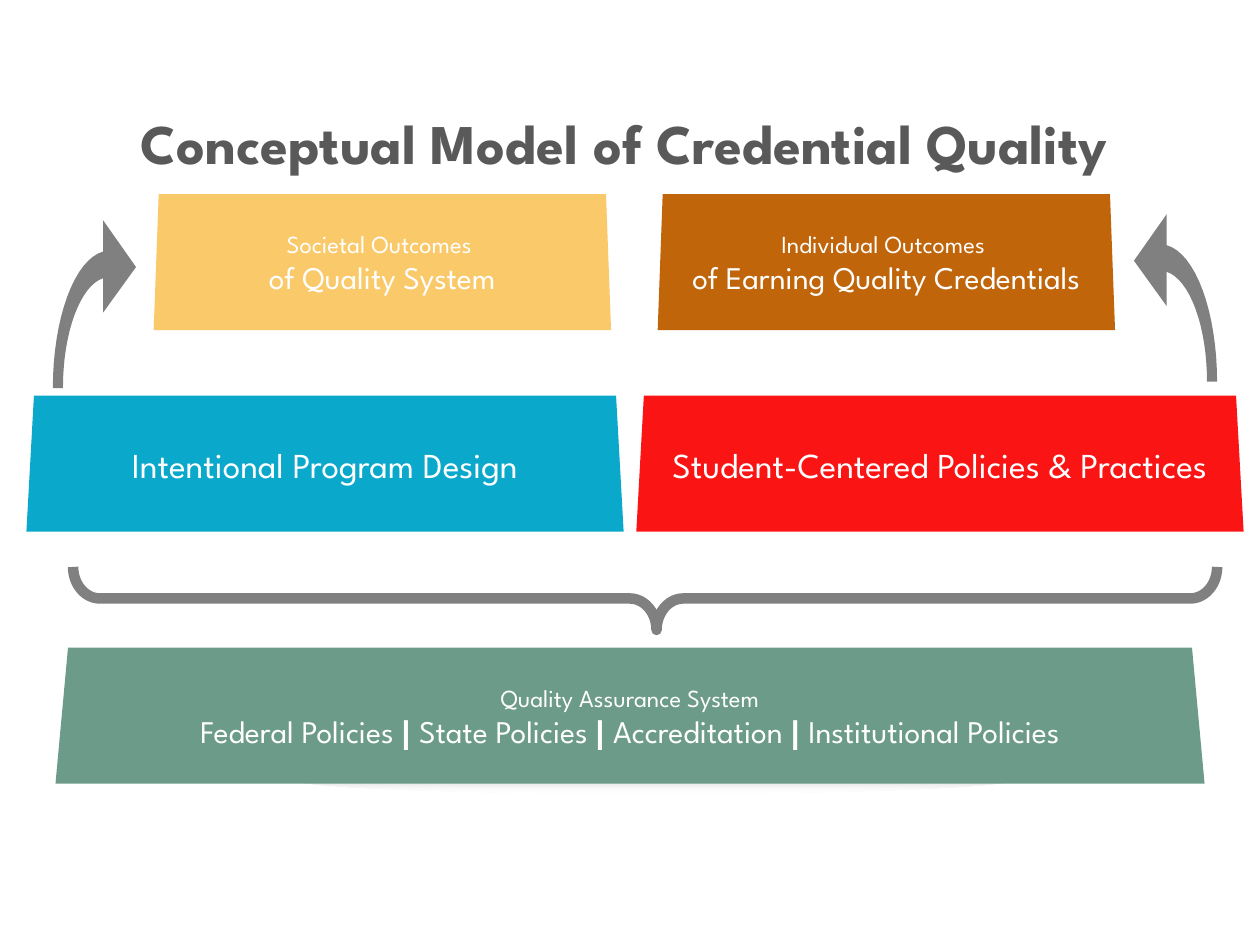
"""Build the Conceptual Model of Credential Quality slide."""
from math import acos, cos, sin

from lxml import etree
from pptx import Presentation
from pptx import util as u
from pptx.dml.color import RGBColor
from pptx.enum import shapes, text
from pptx.oxml import ns

COLORS = {
    "title": "595959", "white": "FFFFFF", "gray": "808080",
    "societal": "FAC969", "individual": "C0650A", "design": "0AA8CB",
    "policies": "FA1414", "assurance": "6C9B89",
}
FONT = "League Spartan"


def add_run(paragraph, words, size=18, color="white", font=FONT, bold=False):
    run = paragraph.add_run()
    run.text = words
    run.font.name = font
    run.font.size = u.Pt(size)
    run.font.bold = bold
    run.font.color.rgb = RGBColor.from_string(COLORS[color])


presentation = Presentation()
presentation.slide_width = u.Inches(10)
presentation.slide_height = u.Inches(7.5)
slide = presentation.slides.add_slide(presentation.slide_layouts[5])

title = slide.shapes.title
title.left, title.top = u.Inches(0.42), u.Inches(0.81)
title.width, title.height = u.Inches(9.08), u.Inches(0.64)
title.text_frame.vertical_anchor = text.MSO_ANCHOR.TOP
title.text_frame.paragraphs[0].alignment = text.PP_ALIGN.CENTER
add_run(title.text_frame.paragraphs[0], "Conceptual Model of Credential Quality",
        size=32, color="title", bold=True)

glow = slide.shapes.add_shape(shapes.MSO_SHAPE.OVAL, u.Inches(2.27), u.Inches(6.05),
                              u.Inches(5.83), u.Inches(0.25))
glow.shadow.inherit = False
glow.line.fill.background()
glow.fill.gradient()
gradient = glow.fill._xPr.find(ns.qn("a:gradFill"))
for child in list(gradient):
    gradient.remove(child)
stops = etree.SubElement(gradient, ns.qn("a:gsLst"))
for position, color, alpha in [(0, "gray", 38), (100, "white", 0)]:
    stop = etree.SubElement(stops, ns.qn("a:gs"), pos=str(position * 1000))
    tint = etree.SubElement(stop, ns.qn("a:srgbClr"), val=COLORS[color])
    etree.SubElement(tint, ns.qn("a:alpha"), val=str(alpha * 1000))
gradient_path = etree.SubElement(gradient, ns.qn("a:path"), path="shape")
etree.SubElement(gradient_path, ns.qn("a:fillToRect"),
                 l="50000", t="50000", r="50000", b="50000")

BLOCK_HEIGHT = 1.08
blocks = [
    ("societal", 1.22, 1.54, 3.63, 0.04, [("Societal Outcomes ", 14), ("of Quality System", 18)]),
    ("individual", 5.22, 1.54, 3.63, 0.04,
     [("Individual Outcomes ", 14), ("of Earning Quality Credentials", 18)]),
    ("design", 0.21, 3.14, 4.74, 0.06, [("Intentional Program Design", 20)]),
    ("policies", 5.05, 3.14, 4.82, 0.06, [("Student-Centered Policies & Practices", 20)]),
    ("assurance", 0.44, 5.14, 9.12, 0.1,
     [("Quality Assurance System", 14),
      ("Federal Policies | State Policies | Accreditation | Institutional Policies", 18)]),
]
for color, left, top, width, slant, lines in blocks:
    block = slide.shapes.add_shape(shapes.MSO_SHAPE.TRAPEZOID, u.Inches(left), u.Inches(top),
                                   u.Inches(width), u.Inches(BLOCK_HEIGHT))
    block.adjustments[0] = slant / BLOCK_HEIGHT
    block.shadow.inherit = False
    block.fill.solid()
    block.fill.fore_color.rgb = RGBColor.from_string(COLORS[color])
    block.line.fill.background()
    frame = block.text_frame
    frame.word_wrap = True
    frame.vertical_anchor = text.MSO_ANCHOR.MIDDLE
    for index, (words, size) in enumerate(lines):
        paragraph = frame.add_paragraph() if index else frame.paragraphs[0]
        paragraph.alignment = text.PP_ALIGN.CENTER
        first, *others = words.split("| ")
        add_run(paragraph, first, size=size)
        for part in others:
            add_run(paragraph, "| ", size=size, font="Arial", bold=True)
            add_run(paragraph, part, size=size)

brace = slide.shapes.add_shape(shapes.MSO_SHAPE.RIGHT_BRACE, u.Inches(4.87), u.Inches(0.21),
                               u.Inches(0.5), u.Inches(9.08))
brace.rotation = 90
brace.adjustments[0] = 0.425
brace.adjustments[1] = 0.49
brace.shadow.inherit = False
brace.fill.background()
brace.line.color.rgb = RGBColor.from_string(COLORS["gray"])
brace.line.width = u.Pt(6)

CENTER_X, BASE_Y, NECK_X, STEPS = 0.87, 3.08, 0.82, 16
arcs = []
for radius_x, radius_y in [(0.37, 0.88), (0.45, 1.09)]:
    end = acos((CENTER_X - NECK_X) / radius_x)
    angles = [end * step / STEPS for step in range(STEPS + 1)]
    arcs.append([(CENTER_X - radius_x * cos(angle), BASE_Y - radius_y * sin(angle))
                 for angle in angles])
inner, outer = arcs
outline = [(NECK_X, 1.75), (1.08, 2.12), (NECK_X, 2.48)] + inner[::-1] + outer

for origin, direction, shift in [(0, 1, 0), (10.08, -1, -0.05)]:
    points = [(u.Inches(origin + direction * x), u.Inches(y + shift)) for x, y in outline]
    builder = slide.shapes.build_freeform(*points[0])
    builder.add_line_segments(points[1:], close=True)
    arrow = builder.convert_to_shape()
    arrow.shadow.inherit = False
    arrow.fill.solid()
    arrow.fill.fore_color.rgb = RGBColor.from_string(COLORS["gray"])
    arrow.line.fill.background()

presentation.save("out.pptx")
